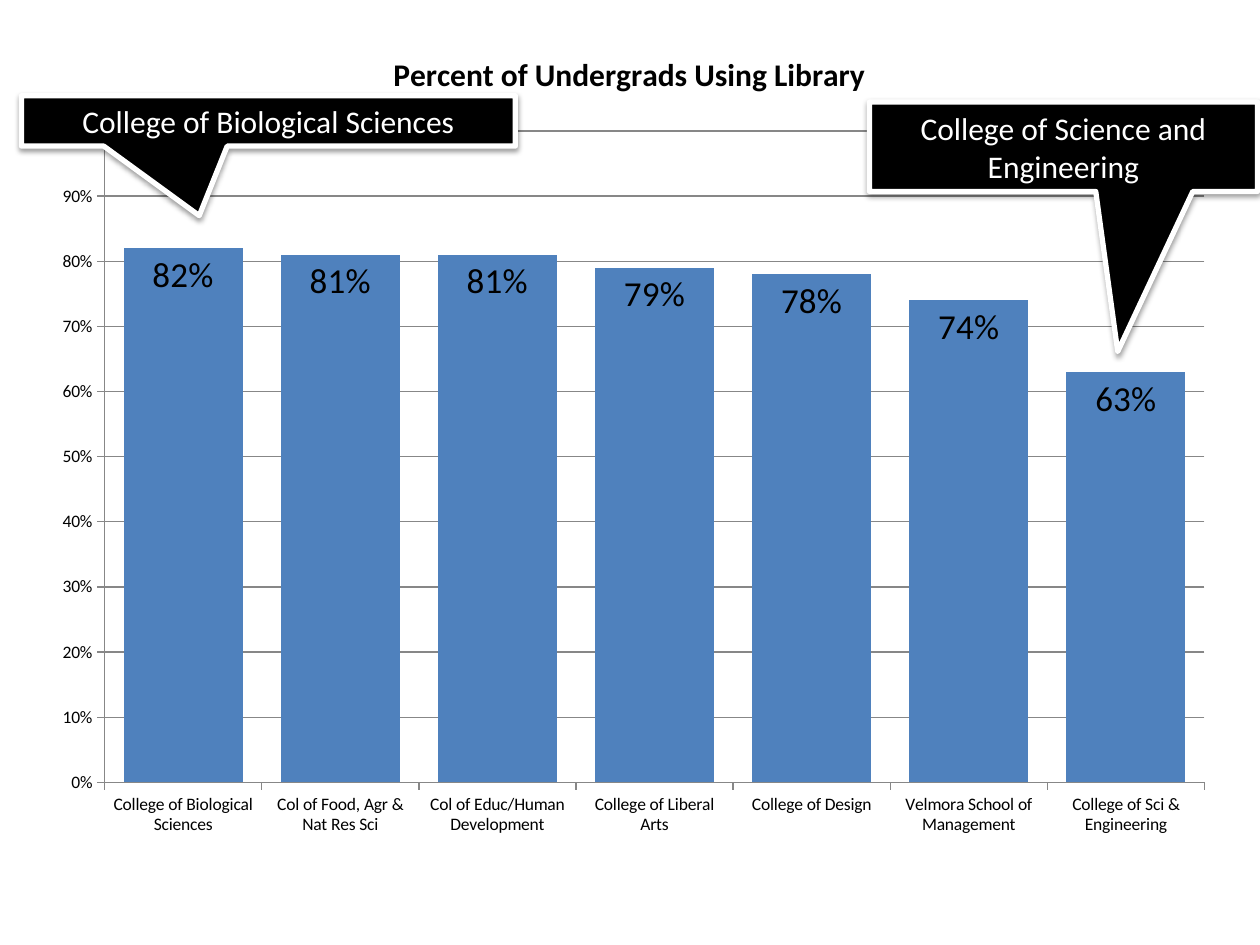
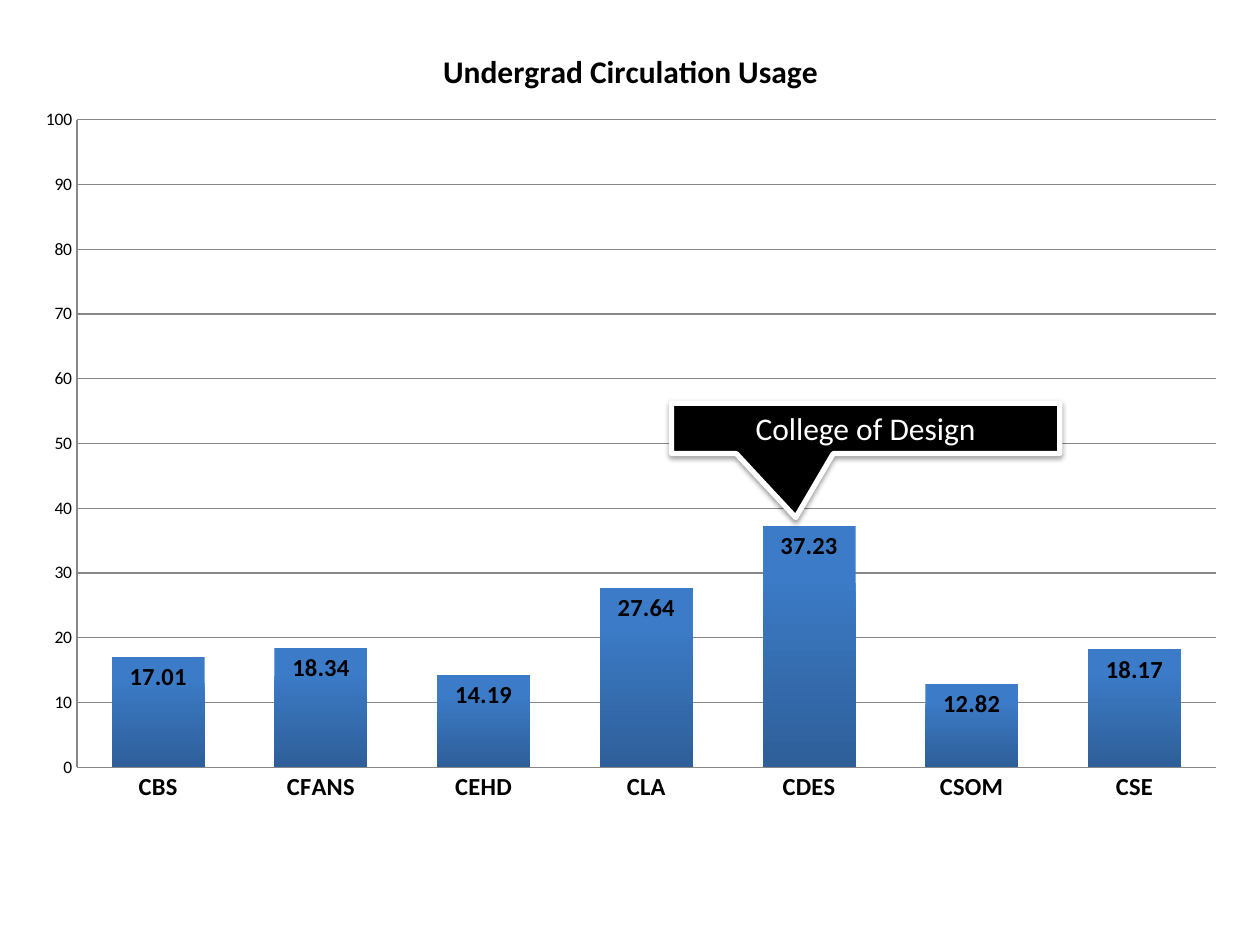
from dataclasses import dataclass
from typing import NamedTuple

from lxml.etree import SubElement
from pptx import Presentation
from pptx.chart.chart import Chart
from pptx.chart.data import CategoryChartData
from pptx.dml.color import RGBColor
from pptx.enum.chart import XL_CHART_TYPE, XL_LABEL_POSITION, XL_TICK_MARK
from pptx.enum.shapes import MSO_SHAPE
from pptx.enum.text import MSO_ANCHOR, MSO_AUTO_SIZE, PP_ALIGN
from pptx.oxml.ns import qn
from pptx.slide import Slide
from pptx.text.text import TextFrame
from pptx.util import Inches, Pt


@dataclass(frozen=True)
class Theme:
    font: str = "Calibri"
    ink: RGBColor = RGBColor(0, 0, 0)
    paper: RGBColor = RGBColor(255, 255, 255)
    grid: RGBColor = RGBColor(0x87, 0x87, 0x87)
    bar: RGBColor = RGBColor(0x4F, 0x81, 0xBD)
    light: RGBColor = RGBColor(0x3C, 0x7B, 0xC7)
    dark: RGBColor = RGBColor(0x2E, 0x5F, 0x99)
    head: int = 18
    small: int = 10


THEME = Theme()


class Box(NamedTuple):
    left: float
    top: float
    width: float
    height: float


class Callout(NamedTuple):
    text: str
    box: Box
    tip: tuple[float, float]


@dataclass(frozen=True)
class Graph:
    title: str
    series: str
    box: Box
    plot: Box
    bars: dict[str, float]
    peak: float
    step: float
    form: str
    tick: XL_TICK_MARK
    gap: int
    label: int
    lap: int = 0
    names: int = THEME.small
    bold: bool = False
    shade: bool = False


class Page(NamedTuple):
    graph: Graph
    notes: list[Callout]


PAGES = [
    Page(
        Graph(
            title="Percent of Undergrads Using Library",
            series="Percent of Undergrads Using Library",
            box=Box(0.24, 0.19, 9.51, 6.56),
            plot=Box(0.83, 1.04, 8.73, 5.17),
            bars={
                "College of Biological Sciences": 0.82,
                "Col of Food, Agr & Nat Res Sci": 0.81,
                "Col of Educ/Human Development": 0.81,
                "College of Liberal Arts": 0.79,
                "College of Design": 0.78,
                "Velmora School of Management": 0.74,
                "College of Sci & Engineering": 0.63,
            },
            peak=1, step=0.1, form="0%", tick=XL_TICK_MARK.OUTSIDE,
            gap=32, label=20,
        ),
        [
            Callout("College of Biological Sciences",
                    Box(0.17, 0.76, 3.92, 0.4), (-0.14, 1.88)),
            Callout("College of Science and Engineering",
                    Box(6.9, 0.81, 3.08, 0.71), (0.14, 2.29)),
        ],
    ),
    Page(
        Graph(
            title="Undergrad Circulation Usage",
            series="Series 1",
            box=Box(0.17, 0.17, 9.67, 6.33),
            plot=Box(0.61, 0.95, 9.04, 5.14),
            bars={
                "CBS": 17.01, "CFANS": 18.34, "CEHD": 14.19, "CLA": 27.64,
                "CDES": 37.23, "CSOM": 12.82, "CSE": 18.17,
            },
            peak=100, step=10, form="General", tick=XL_TICK_MARK.NONE,
            gap=75, label=14, lap=40, names=14, bold=True, shade=True,
        ),
        [Callout("College of Design", Box(5.33, 3.2, 3.08, 0.4), (-0.18, 1.77))],
    ),
]


def place(box: Box) -> list[Inches]:
    return [Inches(side) for side in box]


def style(font, *, size: int, bold: bool = False, color: RGBColor = THEME.ink) -> None:
    font.name = THEME.font
    font.size = Pt(size)
    font.bold = bold
    font.color.rgb = color


def write(frame: TextFrame, text: str, **form) -> None:
    part = frame.paragraphs[0]
    part.alignment = PP_ALIGN.CENTER
    run = part.add_run()
    run.text = text
    style(run.font, **form)


def add_shadow(shape) -> None:
    shape.shadow.inherit = False
    effects = shape._element.spPr.find(qn("a:effectLst"))
    shadow = SubElement(effects, qn("a:outerShdw"), blurRad=str(Pt(3.1)),
                        dist=str(Pt(1.6)), dir="5400000", rotWithShape="0")
    color = SubElement(shadow, qn("a:srgbClr"), val=str(THEME.ink))
    SubElement(color, qn("a:alpha"), val="38000")


def add_callout(slide: Slide, note: Callout) -> None:
    shape = slide.shapes.add_shape(MSO_SHAPE.RECTANGULAR_CALLOUT, *place(note.box))
    for index, value in enumerate(note.tip):
        shape.adjustments[index] = value
    shape.fill.solid()
    shape.fill.fore_color.rgb = THEME.ink
    shape.line.color.rgb = THEME.paper
    shape.line.width = Pt(3)
    add_shadow(shape)
    frame = shape.text_frame
    frame.word_wrap = True
    frame.auto_size = MSO_AUTO_SIZE.SHAPE_TO_FIT_TEXT
    frame.vertical_anchor = MSO_ANCHOR.MIDDLE
    write(frame, note.text, size=THEME.head, color=THEME.paper)


def set_plot(chart: Chart, graph: Graph) -> None:
    area = chart._chartSpace.chart.plotArea
    layout = area.find(qn("c:layout"))
    if layout is None:
        layout = area.makeelement(qn("c:layout"))
        area.insert(0, layout)
    manual = SubElement(layout, qn("c:manualLayout"))
    outer, inner = graph.box, graph.plot
    rules = {
        "layoutTarget": "inner", "xMode": "edge", "yMode": "edge",
        "x": (inner.left - outer.left) / outer.width,
        "y": (inner.top - outer.top) / outer.height,
        "w": inner.width / outer.width,
        "h": inner.height / outer.height,
    }
    for name, value in rules.items():
        SubElement(manual, qn(f"c:{name}"), val=str(value))


def set_axes(chart: Chart, graph: Graph) -> None:
    names, scale = chart.category_axis, chart.value_axis
    for axis in (names, scale):
        axis.major_tick_mark = graph.tick
        axis.minor_tick_mark = XL_TICK_MARK.NONE
        axis.format.line.color.rgb = THEME.grid
    style(names.tick_labels.font, size=graph.names, bold=graph.bold)
    style(scale.tick_labels.font, size=THEME.small)
    scale.minimum_scale = 0
    scale.maximum_scale = graph.peak
    scale.major_unit = graph.step
    scale.has_major_gridlines = True
    scale.major_gridlines.format.line.color.rgb = THEME.grid
    scale.tick_labels.number_format = graph.form
    scale.tick_labels.number_format_is_linked = False


def set_bars(chart: Chart, graph: Graph) -> None:
    plot = chart.plots[0]
    plot.vary_by_categories = False
    plot.gap_width = graph.gap
    plot.overlap = graph.lap
    fill = plot.series[0].format.fill
    if graph.shade:
        fill.gradient()
        fill.gradient_angle = 270
        shades = [(0.2, THEME.light), (1, THEME.dark)]
        for stop, (spot, color) in zip(fill.gradient_stops, shades):
            stop.position = spot
            stop.color.rgb = color
    else:
        fill.solid()
        fill.fore_color.rgb = THEME.bar
    labels = plot.series[0].data_labels
    labels.show_value = True
    labels.position = XL_LABEL_POSITION.INSIDE_END
    labels.number_format = graph.form
    labels.number_format_is_linked = False
    style(labels.font, size=graph.label, bold=graph.bold)


def add_graph(slide: Slide, graph: Graph) -> None:
    data = CategoryChartData(number_format=graph.form)
    data.categories = list(graph.bars)
    data.add_series(graph.series, list(graph.bars.values()))
    chart = slide.shapes.add_chart(
        XL_CHART_TYPE.COLUMN_CLUSTERED, *place(graph.box), data).chart
    style(chart.font, size=THEME.small)
    chart.has_legend = False
    chart.has_title = True
    chart.chart_title.include_in_layout = False
    write(chart.chart_title.text_frame, graph.title, size=THEME.head, bold=True)
    set_plot(chart, graph)
    set_axes(chart, graph)
    set_bars(chart, graph)


def main() -> None:
    deck = Presentation()
    deck.slide_width, deck.slide_height = Inches(10), Inches(7.5)
    blank = deck.slide_layouts[6]
    for page in PAGES:
        slide = deck.slides.add_slide(blank)
        add_graph(slide, page.graph)
        for note in page.notes:
            add_callout(slide, note)
    deck.save("out.pptx")


if __name__ == "__main__":
    main()
